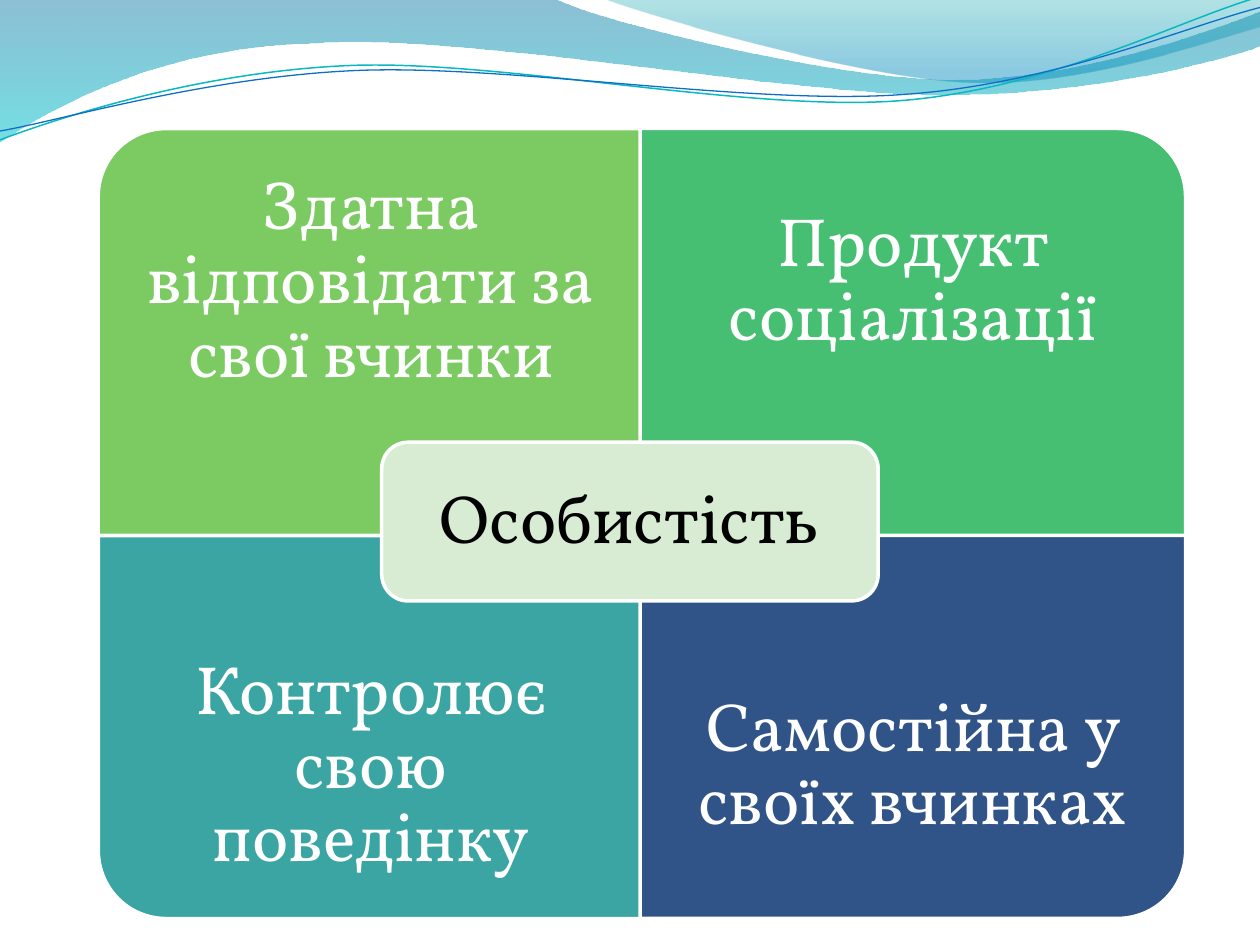
from math import cos, radians, sin

from pptx import Presentation
from pptx.dml.color import RGBColor
from pptx.enum.shapes import MSO_SHAPE as Shape
from pptx.enum.text import MSO_ANCHOR as Anchor, PP_ALIGN as Align
from pptx.oxml.ns import qn
from pptx.oxml.xmlchemy import OxmlElement
from pptx.util import Inches, Pt

FONT = "Vollkorn"
WHITE = RGBColor(0xFF, 0xFF, 0xFF)
BLACK = RGBColor(0, 0, 0)
LIME = RGBColor(0x7C, 0xCA, 0x62)
GREEN = RGBColor(0x46, 0xBF, 0x72)
TEAL = RGBColor(0x3A, 0xA5, 0xA3)
NAVY = RGBColor(0x30, 0x53, 0x88)
MINT = RGBColor(0xD7, 0xEC, 0xD3)
WAVE_BLUE = RGBColor(0x00, 0x74, 0xA1)
WAVE_CYAN = RGBColor(0x00, 0xC6, 0xCF)
CREST_TEAL = RGBColor(0x00, 0xA1, 0xA9)
CREST_BLUE = RGBColor(0x00, 0x8B, 0xBF)
LINE_TEAL = RGBColor(0x0A, 0xB8, 0xBF)
LINE_BLUE = RGBColor(0x0F, 0x6F, 0xC6)

LINE_TILT = -2.7

# Each path is a list of steps: one point is a corner, three points are a Bezier curve.
WAVE = [[(0, 0)], [(4.4, -0.01)], [(4.76, 0.17), (6.64, 0.63), (7.58, 0.63)],
        [(8.53, 0.63), (9.58, 0.26), (10, 0.09)], [(10.01, 0.36)],
        [(9.83, 0.44), (8.7, 0.76), (7.46, 0.75)],
        [(6.22, 0.75), (3.82, 0.28), (2.57, 0.34)],
        [(1.29, 0.36), (0.46, 0.83), (-0.01, 1.13)], [(0, 0)]]
CREST = [[(4.79, -0.01)], [(5.09, 0.11), (6.82, 0.62), (7.69, 0.65)],
         [(8.56, 0.69), (9.61, 0.32), (10, 0.21)], [(10, 0)], [(4.79, -0.01)]]
TEAL_LINE = [[(0, 1.11)], [(0.48, 0.93), (1.58, 0.57), (2.77, 0.52)],
             [(3.95, 0.47), (5.93, 0.89), (7.13, 0.8)],
             [(8.33, 0.71), (9.38, 0.15), (9.98, -0.02)]]
BLUE_LINE = [[(0, 1.04)], [(0.47, 0.96), (1.64, 0.61), (2.83, 0.56)],
             [(4.03, 0.51), (5.97, 0.84), (7.17, 0.75)],
             [(8.36, 0.67), (9.41, 0.21), (10, 0.06)]]


def turn(path, center, degrees):
    """Rotate every point of a path clockwise about the center."""
    cosine, sine = cos(radians(degrees)), sin(radians(degrees))
    center_x, center_y = center
    return [[(center_x + (x - center_x) * cosine - (y - center_y) * sine,
              center_y + (x - center_x) * sine + (y - center_y) * cosine)
             for x, y in step] for step in path]


def add_outline(page, path, close):
    """Build a freeform through all points, then join each group of three into a curve."""
    points = [(Inches(x), Inches(y)) for step in path for x, y in step]
    builder = page.shapes.build_freeform(*points[0])
    builder.add_line_segments(points[1:], close=close)
    outline = builder.convert_to_shape()
    outline.shadow.inherit = False
    segments = iter(list(outline.element.iter(qn("a:lnTo"))))
    for step in path[1:]:
        first, *others = [next(segments) for _ in step]
        if others:
            curve = OxmlElement("a:cubicBezTo")
            first.addprevious(curve)
            for segment in (first, *others):
                curve.append(segment[0])
                segment.getparent().remove(segment)
    return outline


def add_wave(page, path, stops):
    """Draw a closed wave; stops holds (position, colour, opacity percent)."""
    wave = add_outline(page, path, close=True)
    wave.line.fill.background()
    wave.fill.gradient()
    wave.fill.gradient_angle = 270
    for stop, (position, color, _) in zip(wave.fill.gradient_stops, stops):
        stop.position = position
        stop.color.rgb = color
    for color_element, (_, _, opacity) in zip(wave.element.iter(qn("a:srgbClr")), stops):
        alpha = OxmlElement("a:alpha")
        alpha.set("val", str(opacity * 1000))
        color_element.append(alpha)


def add_wave_line(page, path, center, color, width):
    curve = add_outline(page, turn(path, center, -LINE_TILT), close=False)
    curve.rotation = LINE_TILT
    curve.fill.background()
    curve.line.color.rgb = color
    curve.line.width = Pt(width)


def add_panel(page, kind, left, top, width, height, color, rotation=0):
    panel = page.shapes.add_shape(kind, Inches(left), Inches(top), Inches(width), Inches(height))
    panel.rotation = rotation
    panel.shadow.inherit = False
    panel.fill.solid()
    panel.fill.fore_color.rgb = color
    panel.line.color.rgb = WHITE
    panel.line.width = Pt(2)


def add_text(page, text, left, top, width, height, color=WHITE, inset=0.3, size=39):
    box = page.shapes.add_textbox(Inches(left), Inches(top), Inches(width), Inches(height))
    frame = box.text_frame
    frame.word_wrap = True
    frame.vertical_anchor = Anchor.MIDDLE
    frame.margin_left = frame.margin_right = Inches(inset)
    frame.margin_top = frame.margin_bottom = Inches(inset)
    para = frame.paragraphs[0]
    para.alignment = Align.CENTER
    para.line_spacing = 0.9
    span = para.add_run()
    span.text = text
    span.font.name = FONT
    span.font.size = Pt(size)
    span.font.color.rgb = color


def add_header_waves(page):
    add_wave(page, WAVE, [(0, WAVE_BLUE, 45), (1, WAVE_CYAN, 55)])
    add_wave(page, CREST, [(0, CREST_TEAL, 30), (0.8, CREST_BLUE, 45)])
    add_wave_line(page, TEAL_LINE, (4.99, 0.58), LINE_TEAL, 0.85)
    add_wave_line(page, BLUE_LINE, (5, 0.59), LINE_BLUE, 0.75)


def add_quadrant(page, text, left, top, width, height, color, rotation, at_bottom):
    """Place a panel turned so that its round corner points outwards, and its text."""
    panel_width, panel_height = (height, width) if rotation % 180 else (width, height)
    add_panel(page, Shape.ROUND_1_RECTANGLE, left + (width - panel_width) / 2,
              top + (height - panel_height) / 2, panel_width, panel_height, color, rotation)
    text_height = height * 0.75
    text_top = top + height - text_height if at_bottom else top
    add_text(page, text, left, text_top, width, text_height)


def add_matrix(page, left, top, width, height):
    cell_width, cell_height = 4.33, 3.23
    right, bottom = left + width - cell_width, top + height - cell_height
    quadrants = [
        ("Контролює свою поведінку", left, bottom, TEAL, 180),
        ("Здатна відповідати за свої вчинки", left, top, LIME, 270),
        ("Самостійна у своїх вчинках", right, bottom, NAVY, 90),
        ("Продукт соціалізації", right, top, GREEN, 0),
    ]
    for text, x, y, color, rotation in quadrants:
        add_quadrant(page, text, x, y, cell_width, cell_height, color, rotation, y == bottom)
    add_panel(page, Shape.ROUNDED_RECTANGLE, 3.03, 3.51, 3.94, 1.26, MINT)
    add_text(page, "Особистість", 3.09, 3.57, 3.81, 1.14, color=BLACK, inset=0.16)


def main():
    deck = Presentation()
    deck.slide_width, deck.slide_height = Inches(10), Inches(7.5)
    page = deck.slides.add_slide(deck.slide_layouts[6])
    add_header_waves(page)
    add_matrix(page, 0.78, 1.02, 8.63, 6.27)
    deck.save("out.pptx")


if __name__ == "__main__":
    main()
